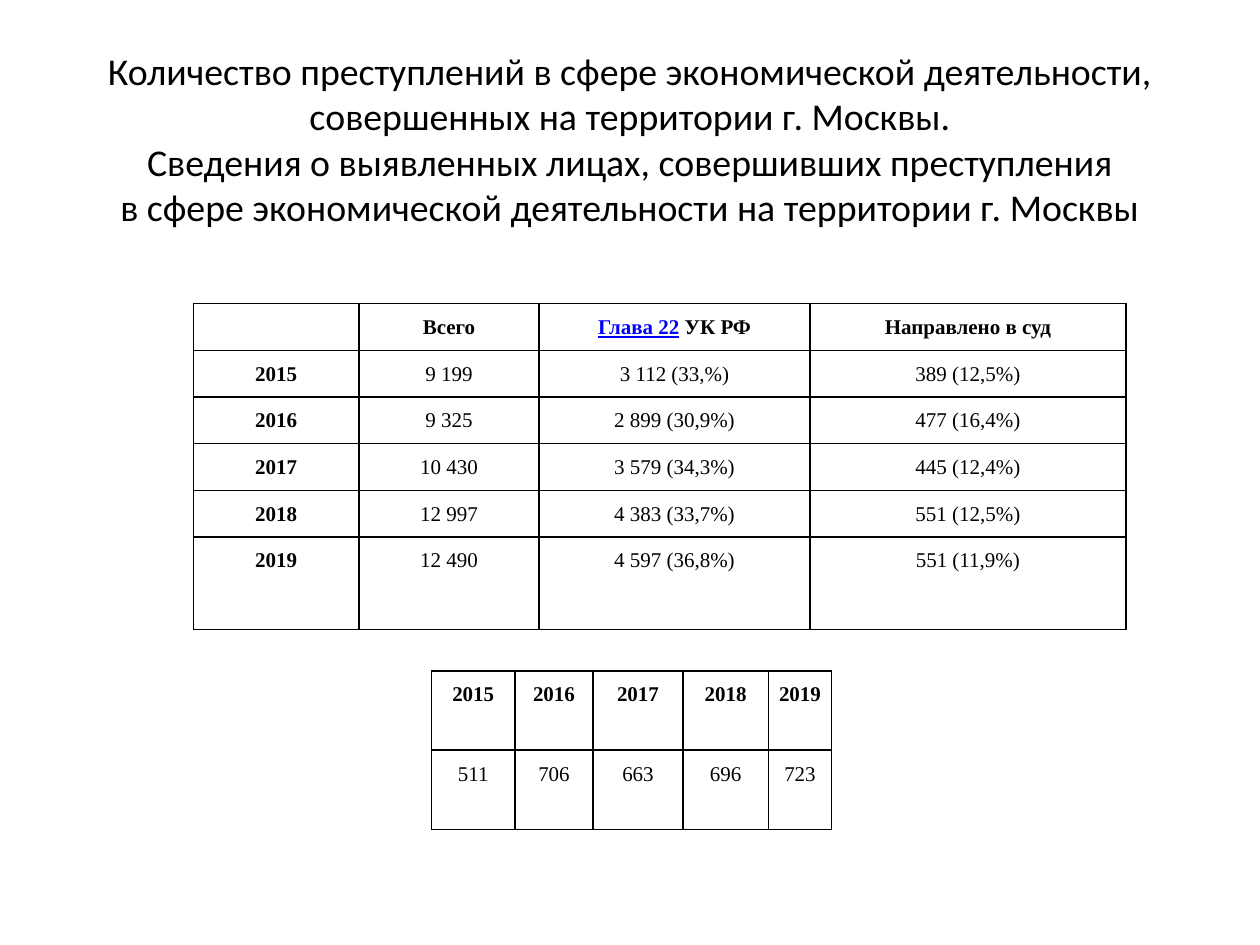
from lxml.etree import SubElement
from pptx import Presentation
from pptx.dml.color import RGBColor
from pptx.enum.text import MSO_ANCHOR as Anchor, PP_ALIGN as Align
from pptx.oxml.ns import qn
from pptx.util import Pt


def color(hex_text):
    return RGBColor.from_string(hex_text)


def add_grid(page, left, top, widths, heights, rows, is_bold):
    """Add a black-ruled table; is_bold(row, column) picks the heading cells."""
    frame = page.shapes.add_table(len(rows), len(widths), Pt(left), Pt(top),
                                  Pt(sum(widths)), Pt(sum(heights)))
    table = frame.table
    table.first_row = table.horz_banding = False
    for column, width in zip(table.columns, widths):
        column.width = Pt(width)
    for row, height in zip(table.rows, heights):
        row.height = Pt(height)

    for r, texts in enumerate(rows):
        for c, text in enumerate(texts):
            cell = table.cell(r, c)
            cell.margin_left = cell.margin_right = Pt(2.9)
            # An empty cell has the taller default font, so it needs no margins
            cell.margin_top = cell.margin_bottom = Pt(5 if text else 0)
            para = cell.text_frame.paragraphs[0]
            para.alignment = Align.CENTER
            para.line_spacing = 1.15
            para.font.name = "Times New Roman"
            para.font.size = Pt(12)
            para.font.bold = is_bold(r, c)
            para.font.color.rgb = color("000000")
            if text:
                para.add_run().text = text
            properties = cell._tc.get_or_add_tcPr()
            for side in ("a:lnL", "a:lnR", "a:lnT", "a:lnB"):
                line = SubElement(properties, qn(side), w=str(Pt(1)))
                fill = SubElement(line, qn("a:solidFill"))
                SubElement(fill, qn("a:srgbClr"), val="000000")
            cell.fill.background()
    return table


deck = Presentation()
deck.slide_width, deck.slide_height = Pt(720), Pt(540)
page = deck.slides.add_slide(deck.slide_layouts[5])

title = page.shapes.title
title.left, title.top, title.width, title.height = Pt(36), Pt(32), Pt(648), Pt(94)
title.text_frame.text = "\v".join([
    "Количество преступлений в сфере экономической деятельности,",
    "совершенных на территории г. Москвы.",
    "Сведения о выявленных лицах, совершивших преступления",
    "в сфере экономической деятельности на территории г. Москвы",
])
title.text_frame.vertical_anchor = Anchor.MIDDLE
para = title.text_frame.paragraphs[0]
para.alignment = Align.CENTER
para.font.name = "Calibri"
para.font.size = Pt(21.6)
para.font.color.rgb = color("000000")

crimes = add_grid(
    page, 110.6, 173.5, [94.5, 103, 154.8, 180.5], [26.7] * 5 + [52.8],
    [
        ["", "Всего", "", "Направлено в суд"],
        ["2015", "9 199", "3 112 (33,%)", "389 (12,5%)"],
        ["2016", "9 325", "2 899 (30,9%)", "477 (16,4%)"],
        ["2017", "10 430", "3 579 (34,3%)", "445 (12,4%)"],
        ["2018", "12 997", "4 383 (33,7%)", "551 (12,5%)"],
        ["2019", "12 490", "4 597 (36,8%)", "551 (11,9%)"],
    ],
    lambda r, c: r == 0 or c == 0)

chapter = crimes.cell(0, 2)
chapter.margin_top = chapter.margin_bottom = Pt(5)
para = chapter.text_frame.paragraphs[0]
span = para.add_run()
span.text = "Глава 22"
span.font.underline = True
span.font.color.rgb = color("0000FF")
para.add_run().text = " УК РФ"

add_grid(
    page, 246.7, 383.3, [47.5, 44.8, 51.2, 49, 36], [45.4] * 2,
    [["2015", "2016", "2017", "2018", "2019"],
     ["511", "706", "663", "696", "723"]],
    lambda r, c: r == 0)

deck.save("out.pptx")
